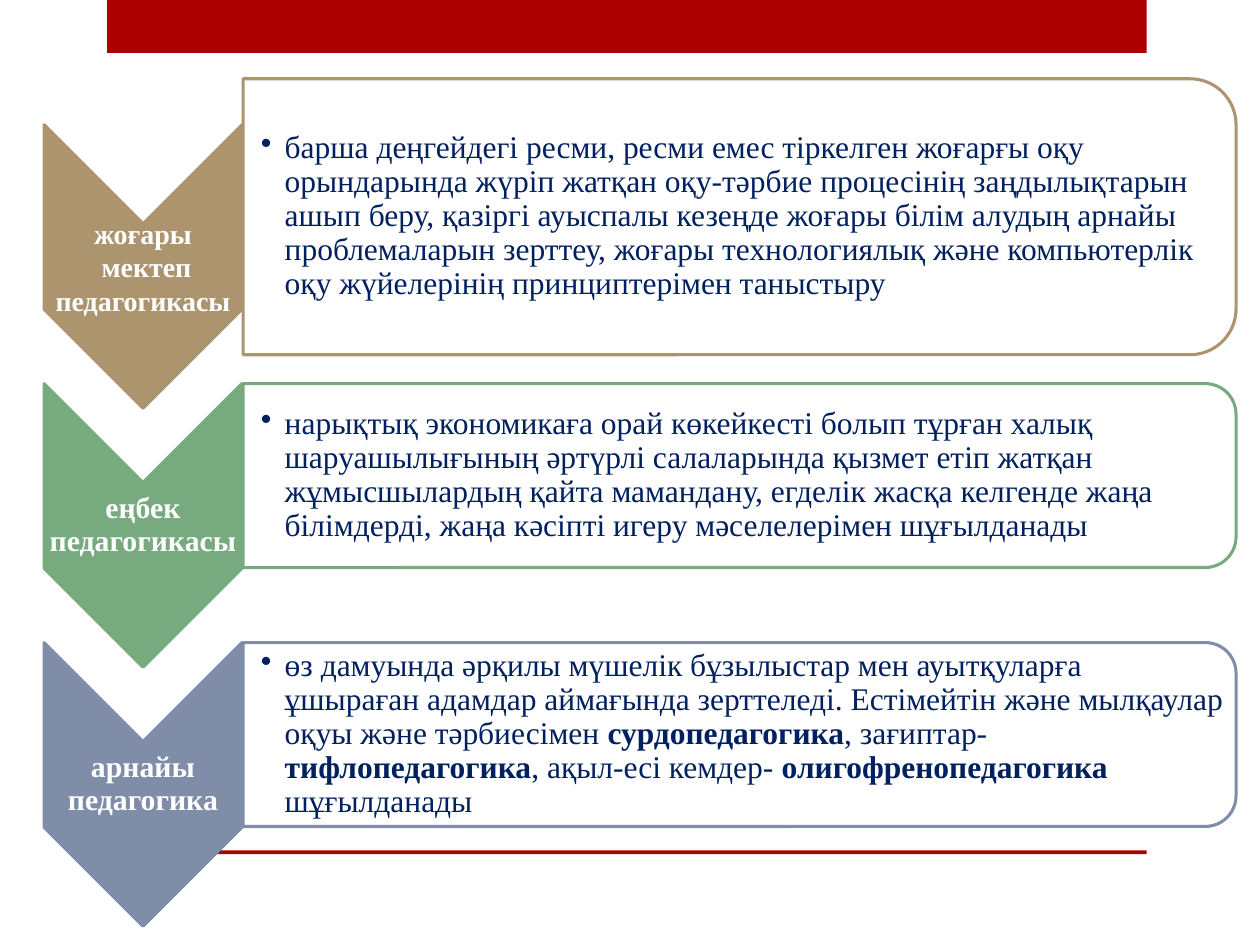
from dataclasses import dataclass

from lxml.etree import SubElement
from pptx import Presentation
from pptx.dml.color import RGBColor
from pptx.enum.shapes import MSO_SHAPE as Shape
from pptx.enum.text import MSO_ANCHOR as Anchor, PP_ALIGN as Align
from pptx.oxml.ns import qn
from pptx.util import Inches, Pt

FONT = "Times New Roman"
RED, WHITE, NAVY = "AD0101", "FFFFFF", "002060"

ROW_PITCH = 2.055
FIRST_PANEL_MIDDLE = 1.72
CHEVRON_DROP = 0.395  # chevron middle below panel middle
CHEVRON_LEFT, CHEVRON_WIDTH, CHEVRON_HEIGHT = 0.35, 1.57, 2.25
PANEL_LEFT, PANEL_WIDTH = 1.93, 7.88
LABEL_HEIGHT = 0.67


@dataclass
class Branch:
    label: list[str]
    label_size: int
    label_spacing: float
    description: str  # **bold** parts between double asterisks
    color: str
    panel_height: float
    text_width: float


BRANCHES = [
    Branch(
        ["жоғары", " мектеп педагогикасы"], 16, 1.0,
        "барша деңгейдегі ресми, ресми емес тіркелген жоғарғы оқу орындарында "
        "жүріп жатқан оқу-тəрбие процесінің заңдылықтарын ашып беру, қазіргі "
        "ауыспалы кезеңде жоғары білім алудың арнайы проблемаларын зерттеу, "
        "жоғары технологиялық жəне компьютерлік оқу жүйелерінің "
        "принциптерімен таныстыру",
        "AC956E", 2.19, 7.77),
    Branch(
        ["еңбек педагогикасы"], 17, 0.9,
        "нарықтық экономикаға орай көкейкесті болып тұрған халық "
        "шаруашылығының əртүрлі салаларында қызмет етіп жатқан "
        "жұмысшылардың қайта мамандану, егделік жасқа келгенде жаңа "
        "білімдерді, жаңа кəсіпті игеру мəселелерімен шұғылданады",
        "77AA7F", 1.46, 7.8),
    Branch(
        ["арнайы педагогика"], 17, 0.9,
        "өз дамуында əрқилы мүшелік бұзылыстар мен ауытқуларға ұшыраған "
        "адамдар аймағында зерттеледі. Естімейтін және мылқаулар оқуы жəне "
        "тəрбиесімен **сурдопедагогика**, зағиптар- **тифлопедагогика**, "
        "ақыл-есі кемдер- **олигофренопедагогика **шұғылданады",
        "808DA9", 1.46, 7.8),
]


def rgb(color: str) -> RGBColor:
    return RGBColor.from_string(color)


def add_bar(slide, top: float, height: float) -> None:
    bar = slide.shapes.add_shape(
        Shape.RECTANGLE, Inches(0.85), Inches(top), Inches(8.25), Inches(height))
    bar.shadow.inherit = False
    bar.fill.solid()
    bar.fill.fore_color.rgb = rgb(RED)
    bar.line.fill.background()


def add_turned_shape(slide, kind, left: float, middle: float, width: float,
                     height: float, fill: str, line: str) -> None:
    """Draw a preset turned by 90 degrees; width and height are as seen."""
    center = left + width / 2
    shape = slide.shapes.add_shape(
        kind, Inches(center - height / 2), Inches(middle - width / 2),
        Inches(height), Inches(width))
    shape.rotation = 90
    shape.shadow.inherit = False
    shape.fill.solid()
    shape.fill.fore_color.rgb = rgb(fill)
    shape.line.color.rgb = rgb(line)
    shape.line.width = Pt(1.75)


def add_text_frame(slide, left: float, middle: float, width: float,
                   height: float, left_inset: float = 0.01):
    box = slide.shapes.add_textbox(
        Inches(left), Inches(middle - height / 2), Inches(width), Inches(height))
    frame = box.text_frame
    frame.word_wrap = True
    frame.vertical_anchor = Anchor.MIDDLE
    frame.margin_left = Inches(left_inset)
    frame.margin_top = frame.margin_right = frame.margin_bottom = Inches(0.01)
    return frame


def format_paragraph(paragraph, size: int, color: str, spacing: float) -> None:
    paragraph.font.name = FONT
    paragraph.font.size = Pt(size)
    paragraph.font.color.rgb = rgb(color)
    paragraph.line_spacing = spacing


def add_bullet(paragraph) -> None:
    properties = paragraph._p.get_or_add_pPr()
    properties.set("marL", str(Inches(0.19)))
    properties.set("indent", str(-Inches(0.19)))
    bullet = SubElement(properties, qn("a:buChar"))
    bullet.set("char", "•")
    # The bullet has to come before the default run properties.
    defaults = properties.find(qn("a:defRPr"))
    if defaults is not None:
        defaults.addprevious(bullet)


def add_label(slide, branch: Branch, middle: float) -> None:
    frame = add_text_frame(
        slide, CHEVRON_LEFT, middle, CHEVRON_WIDTH, LABEL_HEIGHT)
    frame.text = "\n".join(branch.label)
    for paragraph in frame.paragraphs:
        format_paragraph(paragraph, branch.label_size, WHITE, branch.label_spacing)
        paragraph.font.bold = True
        paragraph.alignment = Align.CENTER


def add_description(slide, branch: Branch, middle: float) -> None:
    frame = add_text_frame(slide, PANEL_LEFT, middle, branch.text_width,
                           branch.panel_height * 0.9, left_inset=0.14)
    paragraph = frame.paragraphs[0]
    format_paragraph(paragraph, 18, NAVY, 0.9)
    add_bullet(paragraph)
    for index, text in enumerate(branch.description.split("**")):
        run = paragraph.add_run()
        run.text = text
        if index % 2:
            run.font.bold = True


def add_branch(slide, branch: Branch, panel_middle: float) -> None:
    chevron_middle = panel_middle + CHEVRON_DROP
    add_turned_shape(slide, Shape.CHEVRON, CHEVRON_LEFT, chevron_middle,
                     CHEVRON_WIDTH, CHEVRON_HEIGHT, branch.color, branch.color)
    add_label(slide, branch, chevron_middle)
    add_turned_shape(slide, Shape.ROUND_2_SAME_RECTANGLE, PANEL_LEFT, panel_middle,
                     PANEL_WIDTH, branch.panel_height, WHITE, branch.color)
    add_description(slide, branch, panel_middle)


def main() -> None:
    presentation = Presentation()
    presentation.slide_width = Inches(10)
    presentation.slide_height = Inches(7.5)
    slide = presentation.slides.add_slide(presentation.slide_layouts[6])
    add_bar(slide, 0, 0.42)
    add_bar(slide, 6.75, 0.03)
    for row, branch in enumerate(BRANCHES):
        add_branch(slide, branch, FIRST_PANEL_MIDDLE + row * ROW_PITCH)
    presentation.save("out.pptx")


if __name__ == "__main__":
    main()
